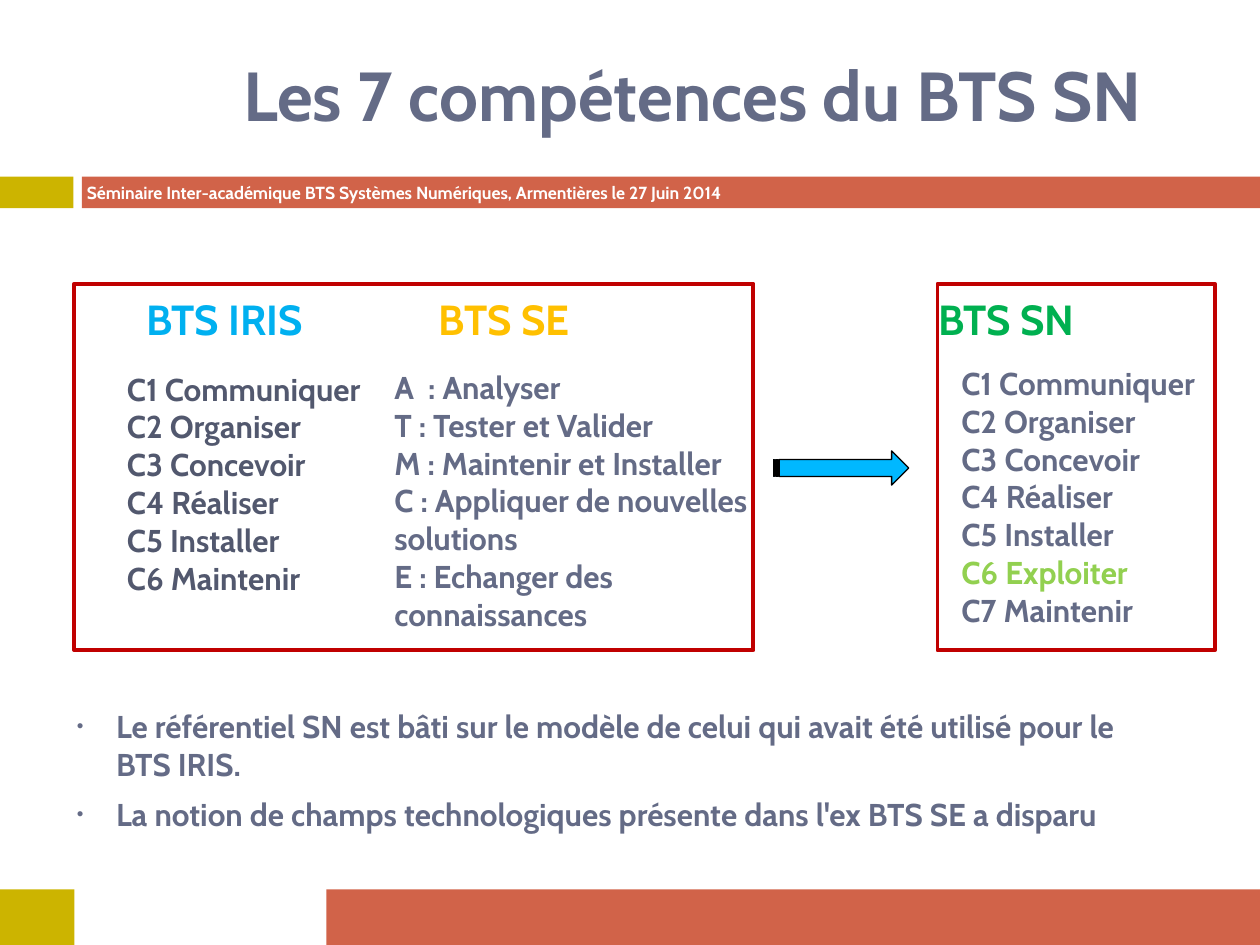
from dataclasses import dataclass

from lxml import etree
from pptx import Presentation
from pptx.dml.color import RGBColor
from pptx.enum.shapes import MSO_SHAPE
from pptx.enum.text import MSO_ANCHOR, MSO_AUTO_SIZE, PP_ALIGN
from pptx.oxml.ns import qn
from pptx.util import Cm, Pt

RECT = MSO_SHAPE.RECTANGLE
ARROW = MSO_SHAPE.STRIPED_RIGHT_ARROW
TOP, MIDDLE = MSO_ANCHOR.TOP, MSO_ANCHOR.MIDDLE
LEFT = PP_ALIGN.LEFT
NONE = MSO_AUTO_SIZE.NONE


@dataclass(frozen=True)
class Theme:
    font: str = "Cabin"
    gold: str = "CCB400"
    rust: str = "D16349"
    white: str = "FFFFFF"
    black: str = "000000"
    slate: str = "646B86"
    dark: str = "52586E"
    blue: str = "00B0F0"
    amber: str = "FFC000"
    green: str = "00B050"
    lime: str = "92D050"
    red: str = "C00000"
    sky: str = "00B8FF"
    title: float = 39.6
    head: float = 24
    body: float = 18
    note: float = 10


class Deck:
    def __init__(self, theme, slide):
        self.theme = theme
        self.slide = slide

    def shape(self, kind, box, fill=None, line=None, width=0.75):
        item = self.slide.shapes.add_shape(kind, *map(Cm, box))
        item.shadow.inherit = False
        if fill:
            item.fill.solid()
            item.fill.fore_color.rgb = RGBColor.from_string(fill)
        else:
            item.fill.background()
        if line:
            item.line.color.rgb = RGBColor.from_string(line)
            item.line.width = Pt(width)
        else:
            item.line.fill.background()

    def run(self, para, text, size, color):
        run = para.add_run()
        run.text = text
        font = run.font
        font.name, font.size, font.bold = self.theme.font, Pt(size), True
        font.color.rgb = RGBColor.from_string(color)

    def frame(self, item, anchor):
        frame = item.text_frame
        frame.word_wrap = True
        frame.auto_size = NONE
        frame.vertical_anchor = anchor
        frame.margin_left = frame.margin_right = Cm(0.25)
        frame.margin_top = frame.margin_bottom = Cm(0.13)
        return frame

    def title(self, box, text):
        item = self.slide.shapes.title
        item.left, item.top, item.width, item.height = map(Cm, box)
        para = self.frame(item, MIDDLE).paragraphs[0]
        para.alignment = LEFT
        self.run(para, text, self.theme.title, self.theme.slate)

    def text(self, box, lines, size, color, marks={}, bullet=False):
        item = self.slide.shapes.add_textbox(*map(Cm, box))
        frame = self.frame(item, TOP)
        for num, line in enumerate(lines):
            para = frame.add_paragraph() if num else frame.paragraphs[0]
            para.alignment = LEFT
            if bullet:
                self.bullet(para)
                if num:
                    para.space_before = Pt(7)
            self.run(para, line, size, marks.get(line, color))

    def bullet(self, para):
        props = para._p.get_or_add_pPr()
        props.set("marL", str(Cm(0.79)))
        props.set("indent", str(-Cm(0.79)))
        for tag, key, value in (
            ("a:buSzPct", "val", "60000"),
            ("a:buFont", "typeface", "Arial"),
            ("a:buChar", "char", "•"),
        ):
            etree.SubElement(props, qn(tag)).set(key, value)


def main():
    show = Presentation()
    show.slide_width, show.slide_height = Cm(25.4), Cm(19.05)
    look = Theme()
    deck = Deck(look, show.slides.add_slide(show.slide_layouts[5]))

    for top, tall, gold, left in ((3.56, 0.64, 1.48, 1.65), (17.93, 1.12, 1.5, 6.58)):
        deck.shape(RECT, (0, top, gold, tall), look.gold)
        deck.shape(RECT, (left, top, 25.4 - left, tall), look.rust)

    deck.text(
        (1.5, 3.53, 15.4, 1.1),
        ["Séminaire Inter-académique BTS Systèmes Numériques, Armentières le 27 Juin 2014"],
        look.note, look.white,
    )
    deck.title((4.65, 0.53, 20.5, 2.74), "Les 7 compétences du BTS SN")

    for left, wide in ((1.5, 13.69), (18.9, 5.59)):
        deck.shape(RECT, (left, 5.72, wide, 7.39), line=look.red, width=2.25)
    deck.shape(ARROW, (15.6, 9.09, 2.72, 0.69), look.sky, look.black)

    for left, name, color in (
        (2.7, "BTS IRIS", look.blue),
        (8.6, "BTS SE", look.amber),
        (18.66, "BTS SN", look.green),
    ):
        deck.text((left, 5.79, 4.5, 1.2), [name], look.head, color)

    iris = ["C1 Communiquer", "C2 Organiser", "C3 Concevoir", "C4 Réaliser", "C5 Installer"]
    deck.text((2.31, 7.32, 5.41, 5.21), iris + ["C6 Maintenir"], look.body, look.dark)
    deck.text(
        (7.7, 7.29, 8.18, 5.21),
        [
            "A  : Analyser",
            "T : Tester et Valider",
            "M : Maintenir et Installer",
            "C : Appliquer de nouvelles solutions",
            "E : Echanger des connaissances",
        ],
        look.body, look.slate,
    )
    deck.text(
        (19.13, 7.21, 5.79, 5.21),
        iris + ["C6 Exploiter", "C7 Maintenir"],
        look.body, look.slate, {"C6 Exploiter": look.lime},
    )
    deck.text(
        (1.3, 14.12, 22.4, 2.59),
        [
            "Le référentiel SN est bâti sur le modèle de celui qui avait été utilisé pour le BTS IRIS.",
            "La notion de champs technologiques présente dans l'ex BTS SE a disparu",
        ],
        look.body, look.slate, bullet=True,
    )
    show.save("out.pptx")


if __name__ == "__main__":
    main()
